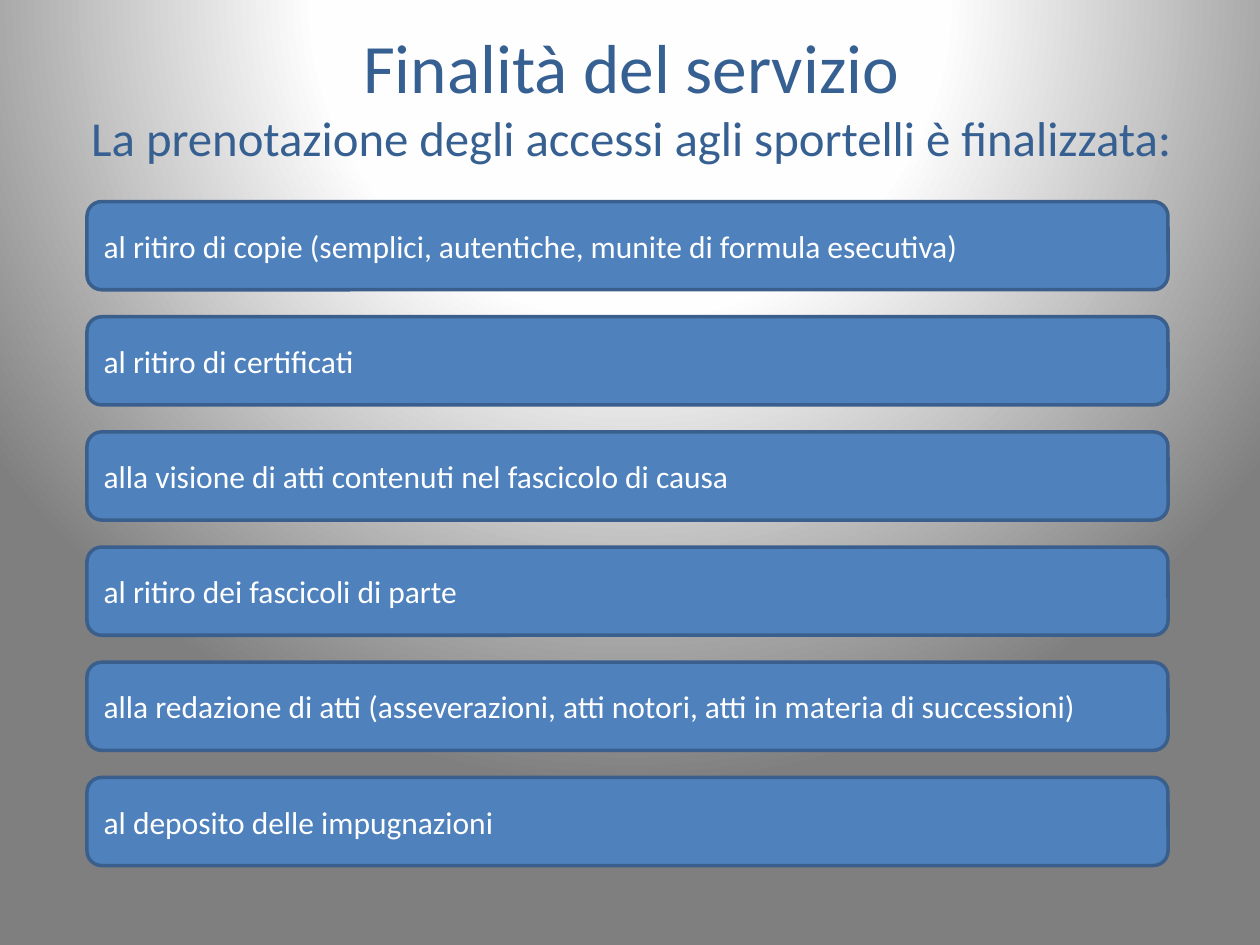
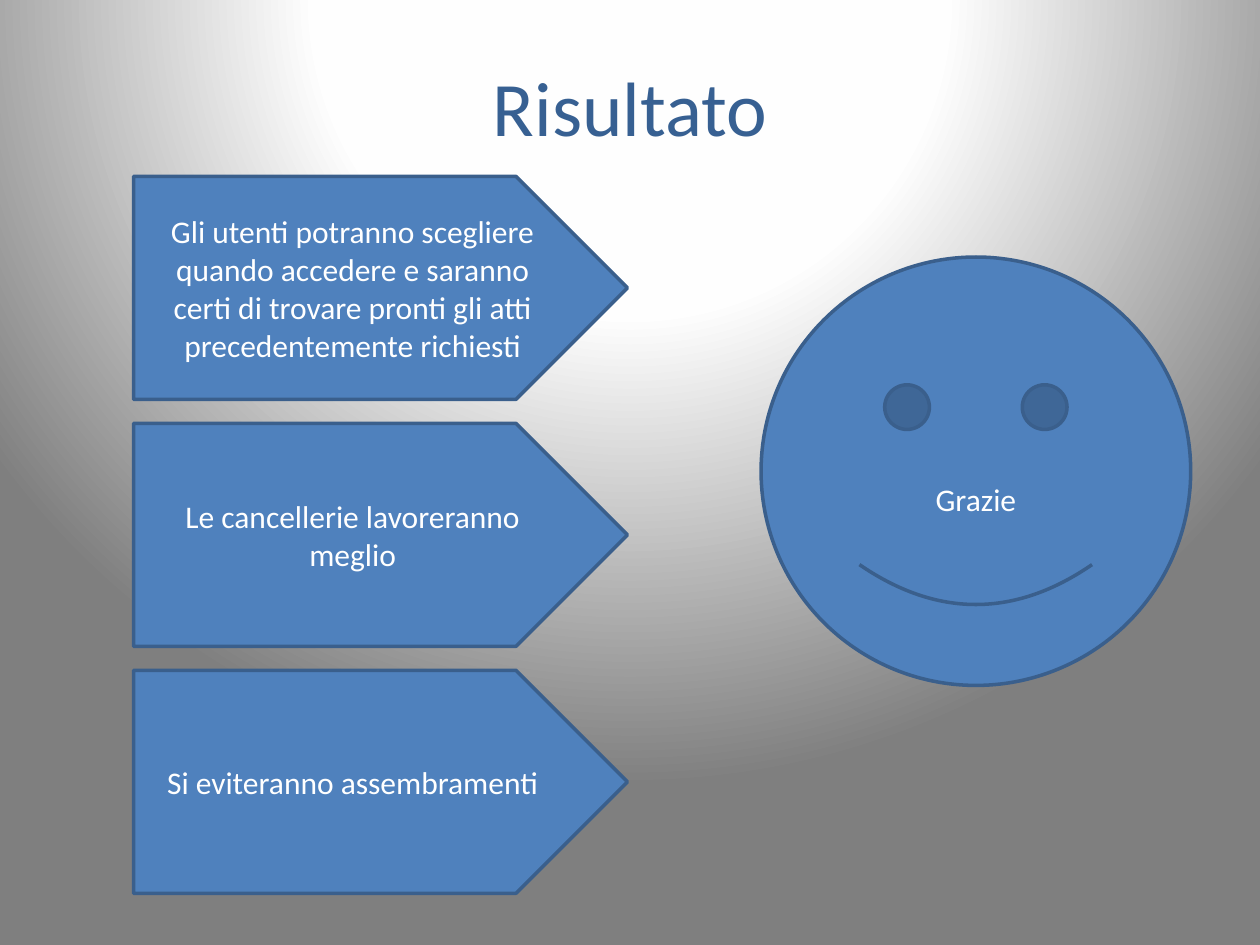
from pptx import Presentation
from pptx.dml.color import RGBColor
from pptx.enum.shapes import MSO_SHAPE
from pptx.enum.text import MSO_ANCHOR, MSO_AUTO_SIZE, PP_ALIGN
from pptx.oxml import parse_xml
from pptx.oxml.ns import nsdecls
from pptx.util import Inches, Pt

ROUND = MSO_SHAPE.ROUNDED_RECTANGLE
ARROW = MSO_SHAPE.PENTAGON
SMILE = MSO_SHAPE.SMILEY_FACE
CENTER = PP_ALIGN.CENTER
JUSTIFY = PP_ALIGN.JUSTIFY
MIDDLE = MSO_ANCHOR.MIDDLE
NO_FIT = MSO_AUTO_SIZE.NONE

FONT = "Calibri"
BLUE, EDGE, NAVY, WHITE = "4F81BD", "3A5F8C", "376092", "FFFFFF"
STOPS = [(0, "FFFFFF"), (40, "FEFEFE"), (100, "7F7F7F")]

AIMS = [
    "al ritiro di copie (semplici, autentiche, munite di formula esecutiva)",
    "al ritiro di certificati",
    "alla visione di atti contenuti nel fascicolo di causa",
    "al ritiro dei fascicoli di parte",
    "alla redazione di atti (asseverazioni, atti notori, atti in materia di successioni)",
    "al deposito delle impugnazioni",
]
GAINS = [
    "Gli utenti potranno scegliere quando accedere e saranno certi di trovare "
    "pronti gli atti precedentemente richiesti",
    "Le cancellerie lavoreranno meglio",
    "Si eviteranno assembramenti",
]


def color(code):
    return RGBColor.from_string(code)


def write(frame, *lines, sizes=(18,), ink=WHITE, align=CENTER):
    """Write lines into one paragraph, each with its own size."""
    frame.word_wrap = True
    frame.auto_size = NO_FIT
    frame.vertical_anchor = MIDDLE
    para = frame.paragraphs[0]
    para.alignment = align
    for i, (line, size) in enumerate(zip(lines, sizes)):
        if i:
            para.add_line_break()
        run = para.add_run()
        run.text = line
        run.font.name = FONT
        run.font.size = Pt(size)
        run.font.color.rgb = color(ink)


def paint_back(master):
    """Give every slide the radial grey background."""
    stops = "".join(
        f'<a:gs pos="{pos * 1000}"><a:srgbClr val="{code}"/></a:gs>'
        for pos, code in STOPS)
    grad = parse_xml(
        f'<a:gradFill {nsdecls("a")} rotWithShape="1"><a:gsLst>{stops}</a:gsLst>'
        '<a:path path="circle"><a:fillToRect l="50000" t="-80000" r="50000" '
        'b="180000"/></a:path></a:gradFill>')
    master.background.fill.solid()
    props = master.element.cSld.bg.bgPr
    props.replace(props[0], grad)


def add_slide(deck, box, *lines, sizes):
    """Add a slide with a placed and formatted title."""
    slide = deck.slides.add_slide(deck.slide_layouts[5])
    title = slide.shapes.title
    title.left, title.top, title.width, title.height = map(Inches, box)
    write(title.text_frame, *lines, sizes=sizes, ink=NAVY)
    return slide


def add_block(slide, kind, box, text="", align=CENTER):
    """Add a blue shape with a dark edge."""
    block = slide.shapes.add_shape(kind, *map(Inches, box))
    block.shadow.inherit = False
    block.fill.solid()
    block.fill.fore_color.rgb = color(BLUE)
    block.line.color.rgb = color(EDGE)
    block.line.width = Pt(2)
    if text:
        write(block.text_frame, text, align=align)


def add_stack(slide, kind, box, step, texts, align=CENTER):
    """Stack equal blocks at a fixed step."""
    left, top, width, height = box
    for i, text in enumerate(texts):
        add_block(slide, kind, (left, top + i * step, width, height), text, align)


def main():
    deck = Presentation()
    deck.slide_width, deck.slide_height = Inches(10), Inches(7.5)
    paint_back(deck.slide_master)

    # Aims of the service
    slide = add_slide(
        deck, (0.51, 0.13, 9, 1.25), "Finalità del servizio",
        "La prenotazione degli accessi agli sportelli è finalizzata:",
        sizes=(39.6, 27.9))
    add_stack(slide, ROUND, (0.69, 1.6, 8.58, 0.7), 0.914, AIMS, JUSTIFY)

    # Results and thanks
    slide = add_slide(deck, (0.5, 0.3, 9, 1.07), "Risultato", sizes=(44,))
    add_stack(slide, ARROW, (1.06, 1.4, 3.92, 1.77), 1.96, GAINS)
    add_block(slide, SMILE, (6.04, 2.04, 3.41, 3.4))
    thanks = slide.shapes.add_textbox(*map(Inches, (6.05, 3.76, 3.39, 0.4)))
    write(thanks.text_frame, "Grazie")

    deck.save("out.pptx")


if __name__ == "__main__":
    main()
